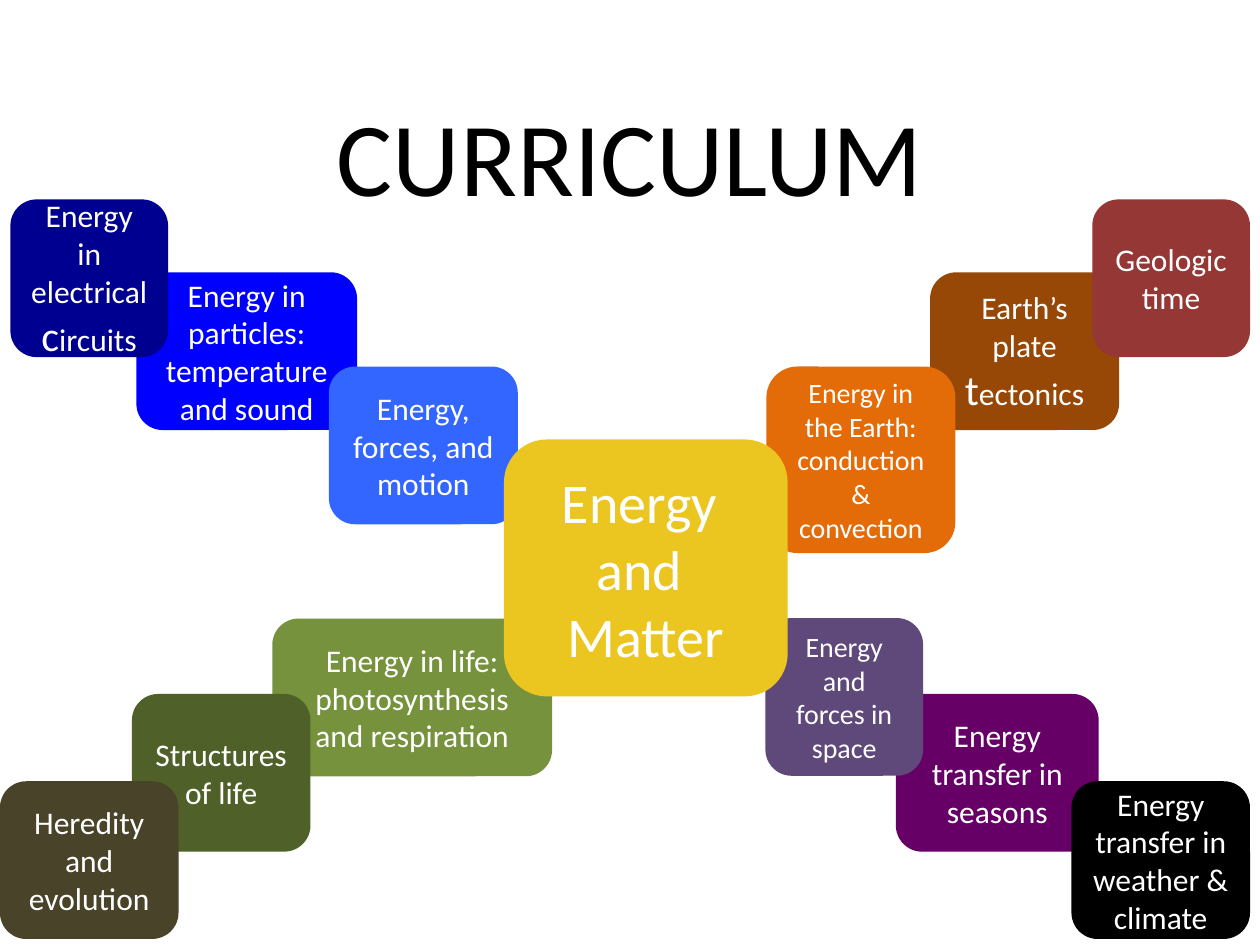
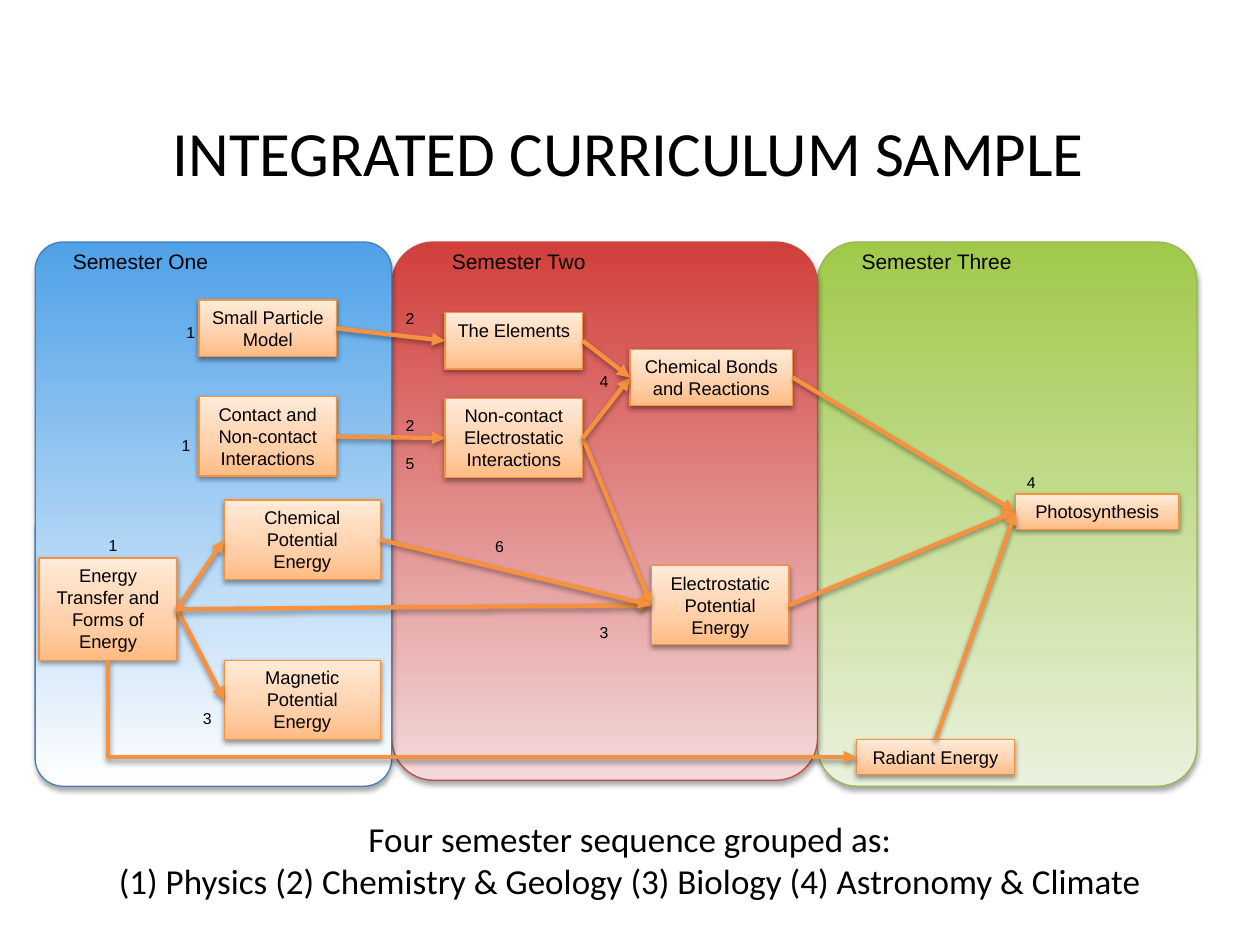
"""Build two curriculum slides: a topic map and a semester flow chart."""
from typing import NamedTuple

from pptx import Presentation
from pptx.dml.color import RGBColor
from pptx.enum.shapes import MSO_CONNECTOR, MSO_SHAPE
from pptx.enum.text import MSO_ANCHOR, PP_ALIGN
from pptx.oxml import parse_xml
from pptx.oxml.ns import nsdecls
from pptx.util import Cm, Pt

BLACK, WHITE, ORANGE = "000000", "FFFFFF", "F5913F"
PEACH = ((0, "FFBB82"), (35, "FFCFA8"), (100, "FFEBD9"))
TOP, LEFT, BOTTOM, RIGHT = range(4)
CENTRE = PP_ALIGN.CENTER


class Area(NamedTuple):
    left: float
    top: float
    width: float
    height: float


class Block(NamedTuple):
    text: str
    fill: str
    area: Area
    size: float = 18


class Panel(NamedTuple):
    text: str
    area: Area
    label: Area
    round: float
    stops: tuple
    line: str


class Box(NamedTuple):
    text: str
    area: Area


class Arrow(NamedTuple):
    start: str
    end: str
    exit: int = RIGHT


BLOCKS = (
    Block("Energy in life: photosynthesis and respiration", "76923C",
          Area(5.49, 12.47, 5.64, 3.18)),
    Block("Earth’s plate |t|ectonics", "974806", Area(18.75, 5.49, 3.81, 3.18)),
    Block("Energy in the Earth: conduction & convection", "E36C09",
          Area(15.45, 7.39, 3.81, 3.76), 16),
    Block("Energy in particles: temperature and sound", "0000FF",
          Area(2.75, 5.49, 4.45, 3.18)),
    Block("Energy in electrical |c|ircuits", "000090", Area(0.21, 4.02, 3.18, 3.18)),
    Block("Energy, forces, and motion", "3366FF", Area(6.63, 7.39, 3.81, 3.18)),
    Block("Structures of life", "4F6128", Area(2.66, 13.99, 3.6, 3.18)),
    Block("Heredity and evolution", "494429", Area(0, 15.75, 3.6, 3.18)),
    Block("Energy transfer in seasons", "660066", Area(18.06, 13.99, 4.09, 3.18)),
    Block("Energy transfer in weather & climate", "000000",
          Area(21.6, 15.75, 3.6, 3.18)),
    Block("Energy and forces in space", "5F497A", Area(15.43, 12.46, 3.18, 3.18), 16),
    Block("Geologic time", "953734", Area(22.02, 4.02, 3.18, 3.18)),
    Block("Energy \nand \nMatter", "ECC620", Area(10.16, 8.86, 5.72, 5.18), 32),
)

PANELS = (
    Panel("Semester Three", Area(16.48, 4.88, 7.65, 10.97),
          Area(17.12, 4.88, 5.36, 0.76), 0.104,
          ((0, "A0C94A"), (100, "EAF1DD")), "97B853"),
    Panel("Semester Two", Area(7.9, 4.88, 8.58, 10.85),
          Area(8.86, 4.88, 3.48, 0.76), 0.098,
          ((0, "D13F3B"), (100, "F2DADA")), "BD4B48"),
    Panel("Semester One", Area(0.71, 4.88, 7.19, 10.97),
          Area(1.22, 4.88, 4.52, 0.76), 0.078,
          ((0, "4FA1E8"), (100, "FFFFFF")), "4A7DBA"),
)

BOXES = {
    "model": Box("Small Particle Model", Area(4.01, 6.05, 2.78, 1.14)),
    "contact": Box("Contact and Non-contact Interactions", Area(4.01, 8, 2.78, 1.6)),
    "atoms": Box("The Elements", Area(8.97, 6.3, 2.78, 1.14)),
    "static": Box("Non-contact Electrostatic Interactions",
                  Area(8.97, 8.03, 2.78, 1.6)),
    "fuel": Box("Chemical Potential Energy", Area(4.52, 10.08, 3.15, 1.6)),
    "charge": Box("Electrostatic Potential Energy", Area(13.13, 11.4, 2.78, 1.6)),
    "magnet": Box("Magnetic Potential Energy", Area(4.52, 13.31, 3.15, 1.6)),
    "bonds": Box("Chemical Bonds and Reactions", Area(12.7, 7.04, 3.28, 1.14)),
    "light": Box("Radiant Energy", Area(17.27, 14.91, 3.18, 0.71)),
    "plant": Box("Photosynthesis", Area(20.47, 9.96, 3.3, 0.71)),
    "forms": Box("Energy Transfer and Forms of Energy",
                 Area(0.79, 11.25, 2.78, 2.06)),
}

ARROWS = (
    Arrow("model", "atoms"), Arrow("contact", "static"), Arrow("forms", "fuel"),
    Arrow("forms", "magnet"), Arrow("forms", "charge"), Arrow("static", "charge"),
    Arrow("fuel", "charge"), Arrow("static", "bonds"), Arrow("atoms", "bonds"),
    Arrow("bonds", "plant"), Arrow("charge", "plant"), Arrow("light", "plant", TOP),
)

MARKS = (
    ("1", 3.53, 6.38), ("1", 1.96, 10.67), ("2", 7.95, 6.1), ("2", 7.95, 8.26),
    ("1", 3.43, 8.66), ("3", 3.86, 14.17), ("4", 11.86, 7.37), ("4", 20.47, 9.4),
    ("5", 7.95, 9.02), ("6", 9.75, 10.69), ("3", 11.86, 12.42),
)


def colour(code: str) -> RGBColor:
    """Turn a hex string into a colour."""
    return RGBColor.from_string(code)


def format_all(target, **values) -> None:
    """Set each named attribute of the target."""
    for name, value in values.items():
        setattr(target, name, value)


def place(area: Area) -> tuple:
    """Give the area as lengths."""
    return tuple(Cm(side) for side in area)


def write(shape, text: str, size: float, face: str = "Calibri", ink: str = BLACK,
          align=CENTRE, anchor=MSO_ANCHOR.TOP) -> None:
    """Fill the shape with text; parts between bars are set at 24 points."""
    frame = shape.text_frame
    format_all(frame, word_wrap=True, vertical_anchor=anchor)
    for row, line in enumerate(text.split("\n")):
        para = frame.add_paragraph() if row else frame.paragraphs[0]
        para.alignment = align
        for order, part in enumerate(line.split("|")):
            run = para.add_run()
            run.text = part
            format_all(run.font, name=face, size=Pt(24 if order % 2 else size))
            run.font.color.rgb = colour(ink)


def add_title(deck, text: str, size: float, area: Area):
    """Add a title-only slide and return it."""
    slide = deck.slides.add_slide(deck.slide_layouts[5])
    title = slide.shapes.title
    format_all(title, **dict(zip(Area._fields, place(area))))
    write(title, text, size, anchor=MSO_ANCHOR.MIDDLE)
    return slide


def add_text(slide, text: str, area: Area, size: float, face: str = "Arial",
             align=CENTRE) -> None:
    """Add a text box."""
    write(slide.shapes.add_textbox(*place(area)), text, size, face, align=align)


def add_block(slide, block: Block) -> None:
    """Add a plain rounded topic block."""
    shape = slide.shapes.add_shape(MSO_SHAPE.ROUNDED_RECTANGLE, *place(block.area))
    shape.shadow.inherit = False
    shape.fill.solid()
    shape.fill.fore_color.rgb = colour(block.fill)
    shape.line.fill.background()
    write(shape, block.text, block.size, ink=WHITE, anchor=MSO_ANCHOR.MIDDLE)


def add_shadow(shape, alpha: int, drop: float) -> None:
    """Cast a soft shadow straight down."""
    shape._element.spPr.append(parse_xml(
        f'<a:effectLst {nsdecls("a")}><a:outerShdw blurRad="{Pt(3.1)}" '
        f'dist="{Pt(drop)}" dir="5400000" rotWithShape="0"><a:srgbClr val="{BLACK}">'
        f'<a:alpha val="{alpha * 1000}"/></a:srgbClr></a:outerShdw></a:effectLst>'))


def add_tile(slide, kind, area: Area, stops: tuple, angle: int, edge: str,
             alpha: int, drop: float):
    """Add an outlined shape with a gradient and a shadow."""
    shape = slide.shapes.add_shape(kind, *place(area))
    marks = "".join(f'<a:gs pos="{spot * 1000}"><a:srgbClr val="{code}"/></a:gs>'
                    for spot, code in stops)
    shape._element.spPr.append(parse_xml(
        f'<a:gradFill {nsdecls("a")} rotWithShape="1"><a:gsLst>{marks}</a:gsLst>'
        f'<a:lin ang="{angle * 60000}" scaled="0"/></a:gradFill>'))
    shape.line.color.rgb = colour(edge)
    shape.line.width = Pt(0.75)
    add_shadow(shape, alpha, drop)
    return shape


def add_panel(slide, panel: Panel) -> None:
    """Add a semester panel."""
    shape = add_tile(slide, MSO_SHAPE.ROUNDED_RECTANGLE, panel.area, panel.stops,
                     90, panel.line, 35, 1.8)
    shape.adjustments[0] = panel.round


def add_box(slide, box: Box):
    """Add a unit box and return it."""
    shape = add_tile(slide, MSO_SHAPE.RECTANGLE, box.area, PEACH, 270, ORANGE, 38, 1.6)
    write(shape, box.text, 10.5, "Arial")
    return shape


def style_arrow(link) -> None:
    """Give the connector its line, head and shadow."""
    link.line.color.rgb = colour(ORANGE)
    link.line.width = Pt(2.5)
    link.line._get_or_add_ln().append(
        parse_xml(f'<a:tailEnd {nsdecls("a")} type="triangle"/>'))
    add_shadow(link, 38, 1.6)


def add_arrow(slide, shapes: dict, arrow: Arrow) -> None:
    """Join two boxes with a straight arrow."""
    link = slide.shapes.add_connector(MSO_CONNECTOR.STRAIGHT, 0, 0, 0, 0)
    link.begin_connect(shapes[arrow.start], arrow.exit)
    link.end_connect(shapes[arrow.end], LEFT)
    style_arrow(link)


def add_bend(slide, start, end) -> None:
    """Run an arrow down from one box, then right to another."""
    left, top = start.left + start.width // 2, start.top + start.height
    wide, high = end.left - left, end.top + end.height // 2 - top
    mid, level = left + wide // 2, top + high // 2
    link = slide.shapes.add_connector(
        MSO_CONNECTOR.ELBOW, mid + high // 2, level - wide // 2,
        mid - high // 2, level + wide // 2)
    frame = link._element.spPr
    frame.xfrm.set("rot", str(270 * 60000))
    frame.prstGeom.set("prst", "bentConnector2")
    style_arrow(link)


def draw_map(deck) -> None:
    """Draw the topic map."""
    slide = add_title(deck, "CURRICULUM", 60, Area(0, 1.35, 25.4, 3.53))
    for block in BLOCKS:
        add_block(slide, block)


def draw_flow(deck) -> None:
    """Draw the semester flow chart."""
    slide = add_title(deck, "INTEGRATED CURRICULUM SAMPLE", 36,
                      Area(-0.03, 1.8, 25.4, 2.49))
    for panel in PANELS:
        add_panel(slide, panel)
    shapes = {name: add_box(slide, box) for name, box in BOXES.items()}
    for arrow in ARROWS:
        add_arrow(slide, shapes, arrow)
    add_bend(slide, shapes["forms"], shapes["light"])
    for panel in PANELS:
        add_text(slide, panel.text, panel.label, 12, align=PP_ALIGN.LEFT)
    for text, left, top in MARKS:
        add_text(slide, text, Area(left, top, 0.48, 0.64), 9)
    add_text(slide, "Four semester sequence grouped as:\n(1) Physics (2) Chemistry & "
             "Geology (3) Biology (4) Astronomy & Climate",
             Area(0.99, 16.36, 23.42, 1.96), 20, "Calibri")


def main() -> None:
    """Build and save the deck."""
    deck = Presentation()
    format_all(deck, slide_width=Cm(25.4), slide_height=Cm(19.05))
    draw_map(deck)
    draw_flow(deck)
    deck.save("out.pptx")


if __name__ == "__main__":
    main()
